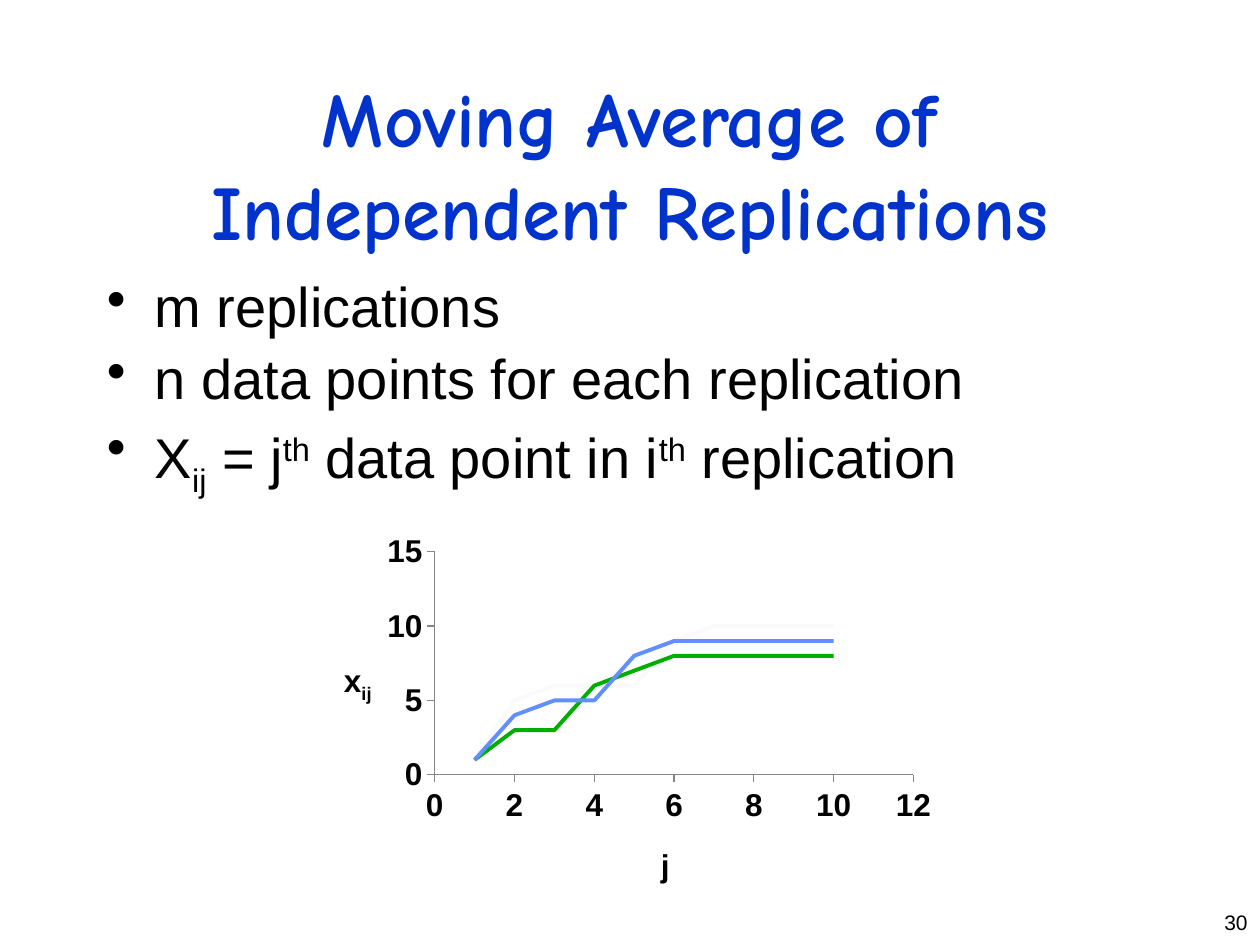
from lxml import etree
from pptx import Presentation
from pptx import util as u
from pptx.chart.data import XyChartData
from pptx.dml.color import RGBColor
from pptx.enum import chart as c, text
from pptx.oxml import parse_xml
from pptx.oxml.ns import nsdecls, qn

BLACK = RGBColor(0, 0, 0)
TITLE_BLUE = RGBColor(0x00, 0x33, 0xCC)
AXIS_GREY = RGBColor(0x86, 0x86, 0x86)
LIGHT_BLUE = RGBColor(0x61, 0x8F, 0xFD)
GREEN = RGBColor(0x00, 0xAE, 0x00)
PALE = RGBColor(0xFA, 0xFA, 0xFA)

SUBSCRIPT, SUPERSCRIPT = -25, 30

# Each bullet is a list of (text, baseline shift in percent)
BULLETS = [
    [("m replications", 0)],
    [("n data points for each replication", 0)],
    [("X", 0), ("ij", SUBSCRIPT), (" = j", 0), ("th", SUPERSCRIPT),
     (" data point in i", 0), ("th", SUPERSCRIPT), (" replication", 0)],
]
SERIES = [
    ("Series 1", LIGHT_BLUE, [1, 4, 5, 5, 8, 9, 9, 9, 9, 9]),
    ("Series 2", GREEN, [1, 3, 3, 6, 7, 8, 8, 8, 8, 8]),
    ("Series 3", PALE, [1, 5, 6, 6, 6, 9, 10, 10, 10, 10]),
]


def box(left, top, width, height):
    return [u.Inches(value) for value in (left, top, width, height)]


def set_font(font, size, color=BLACK, name="Arial", bold=False):
    font.size, font.name, font.bold = u.Pt(size), name, bold
    font.color.rgb = color


def add_runs(paragraph, pieces):
    for piece, shift in pieces:
        run = paragraph.add_run()
        run.text = piece
        if shift:
            run._r.get_or_add_rPr().set("baseline", str(shift * 1000))


def add_title(slide, wording):
    title = slide.shapes.title
    title.left, title.top, title.width, title.height = box(0.75, 0.67, 8.5, 1.25)
    frame = title.text_frame
    frame.text = wording
    frame.word_wrap = True
    frame.auto_size = text.MSO_AUTO_SIZE.NONE
    frame.vertical_anchor = text.MSO_ANCHOR.MIDDLE
    frame.paragraphs[0].alignment = text.PP_ALIGN.CENTER
    set_font(frame.paragraphs[0].font, 44, TITLE_BLUE, "Comic Neue", True)


def add_bullets(slide, bullets):
    frame = slide.shapes.add_textbox(*box(0.75, 2.17, 8.5, 4.5)).text_frame
    frame.word_wrap = True
    for index, pieces in enumerate(bullets):
        paragraph = frame.add_paragraph() if index else frame.paragraphs[0]
        paragraph.line_spacing = 0.9
        paragraph.space_before = u.Pt(6.4)
        properties = paragraph._p.get_or_add_pPr()
        properties.set("marL", str(u.Inches(0.38)))
        properties.set("indent", str(u.Inches(-0.38)))
        etree.SubElement(properties, qn("a:buChar")).set("char", "•")
        set_font(paragraph.font, 32)
        add_runs(paragraph, pieces)


def add_page_number(slide, number):
    frame = slide.shapes.add_textbox(*box(9.25, 7.17, 0.75, 0.33)).text_frame
    frame.word_wrap = True
    frame.margin_right = u.Inches(0.1)
    paragraph = frame.paragraphs[0]
    paragraph.text = number
    paragraph.alignment = text.PP_ALIGN.RIGHT
    set_font(paragraph.font, 12)


def place(element, index, targets="", **fractions):
    """Give a chart part a manual layout in fractions of the chart."""
    for old in element.findall(qn("c:layout")):
        element.remove(old)
    modes = '<c:xMode val="edge"/><c:yMode val="edge"/>'
    values = "".join(f'<c:{key} val="{value}"/>' for key, value in fractions.items())
    element.insert(index, parse_xml(
        f'<c:layout {nsdecls("c")}><c:manualLayout>{targets}{modes}{values}'
        "</c:manualLayout></c:layout>"))


def format_axis(axis, maximum, step, title_pieces, x, y):
    axis.minimum_scale, axis.maximum_scale, axis.major_unit = 0, maximum, step
    axis.has_major_gridlines = False
    axis.major_tick_mark = c.XL_TICK_MARK.OUTSIDE
    axis.minor_tick_mark = c.XL_TICK_MARK.NONE
    axis.format.line.color.rgb = AXIS_GREY
    axis.format.line.width = u.Pt(0.75)
    set_font(axis.tick_labels.font, 18, bold=True)
    frame = axis.axis_title.text_frame
    frame._txBody.bodyPr.set("rot", "0")
    set_font(frame.paragraphs[0].font, 18, bold=True)
    add_runs(frame.paragraphs[0], title_pieces)
    place(axis.axis_title.element, 1, x=x, y=y)


def add_line_chart(slide):
    data = XyChartData()
    for name, _, values in SERIES:
        series = data.add_series(name)
        for x, y in enumerate(values, start=1):
            series.add_data_point(x, y)
    chart = slide.shapes.add_chart(
        c.XL_CHART_TYPE.XY_SCATTER_LINES_NO_MARKERS, *box(2.5, 4.17, 5, 3), data).chart
    chart.has_legend = chart.has_title = False
    set_font(chart.font, 18, bold=True)
    plot = chart.plots[0]
    plot.vary_by_categories = False
    for series, (_, color, _) in zip(plot.series, SERIES):
        series.format.line.color.rgb = color
        series.format.line.width = u.Pt(2.25)
    format_axis(chart.category_axis, 12, 2, [("j", 0)], 0.54, 0.83)
    format_axis(chart.value_axis, 15, 5, [("x", 0), ("ij", SUBSCRIPT)], 0.04, 0.35)
    place(chart.element.find(".//" + qn("c:plotArea")), 0,
          '<c:layoutTarget val="inner"/>', x=0.19, y=0.07, w=0.76, h=0.59)


def main():
    presentation = Presentation()
    presentation.slide_width, presentation.slide_height = u.Inches(10), u.Inches(7.5)
    slide = presentation.slides.add_slide(presentation.slide_layouts[5])
    add_title(slide, "Moving Average of Independent Replications")
    add_bullets(slide, BULLETS)
    add_page_number(slide, "30")
    add_line_chart(slide)
    presentation.save("out.pptx")


if __name__ == "__main__":
    main()
